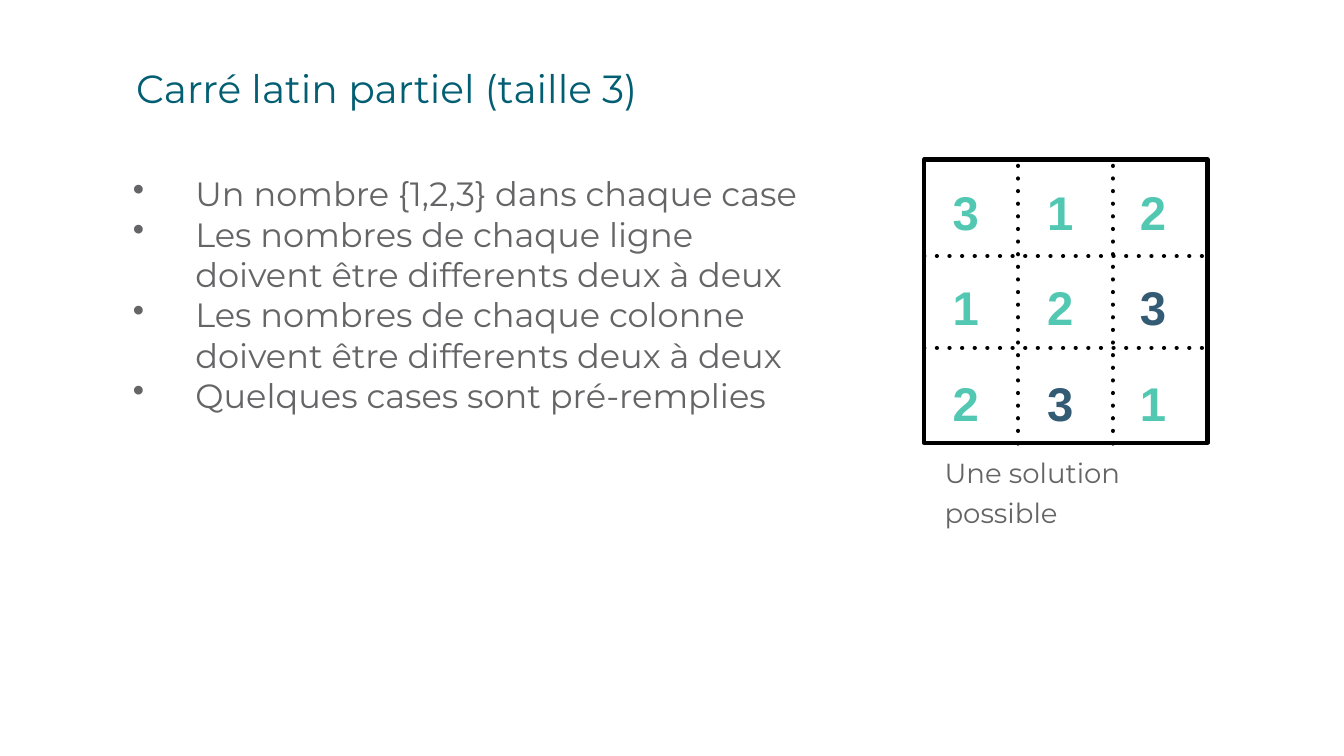
"""Build the slide on the partial Latin square of size 3."""
from lxml import etree
from pptx import Presentation
from pptx.dml.color import RGBColor
from pptx.enum import shapes, text
from pptx.oxml.ns import qn
from pptx.util import Pt

TITLE = "Carré latin partiel (taille 3)"
RULES = [
    "Un nombre {1,2,3} dans chaque case",
    "Les nombres de chaque ligne doivent être differents deux à deux",
    "Les nombres de chaque colonne doivent être differents deux à deux",
    "Quelques cases sont pré-remplies",
]
CAPTION = "Une solution possible"
SOLUTION = ["312", "123", "231"]
GIVEN = {(1, 2), (2, 1)}

COLORS = {"title": "025E73", "body": "656567", "found": "52C8B2",
          "given": "335B74", "line": "000000", "square": "FFFFFF"}
SQUARE_LEFT, SQUARE_TOP, SQUARE_SIDE = 660.2, 113.9, 202.4
ROW_LINES = (182.9, 248.4)
COLUMN_LINES = (727.2, 794.9)
DIGIT_LEFTS = (677.5, 745, 811.3)
DIGIT_TOPS = (120.2, 187.4, 256.5)
DIGIT_SIZE = (35.3, 50.4)
BULLET_INDENT = 44.7


def rgb(name):
    return RGBColor.from_string(COLORS[name])


def style(target, **values):
    for key, value in values.items():
        setattr(target, key, value)


def write(box, lines, size, color, face="Montserrat", bold=False,
          spacing=None, margin=None, anchor=text.MSO_ANCHOR.TOP, bullets=False):
    frame = box.text_frame
    frame.text = "\n".join(lines)
    style(frame, word_wrap=True, vertical_anchor=anchor,
          auto_size=text.MSO_AUTO_SIZE.NONE)
    if margin is not None:
        style(frame, **{f"margin_{side}": Pt(margin)
                        for side in ("left", "right", "top", "bottom")})
    for paragraph in frame.paragraphs:
        style(paragraph, alignment=text.PP_ALIGN.LEFT, line_spacing=spacing)
        if bullets:
            properties = paragraph._p.get_or_add_pPr()
            properties.set("marL", str(Pt(BULLET_INDENT)))
            properties.set("indent", str(-Pt(BULLET_INDENT)))
            etree.SubElement(properties, qn("a:buChar"), char="•")
        for run in paragraph.runs:
            style(run.font, name=face, size=Pt(size), bold=bold)
            run.font.color.rgb = rgb(color)


def add_text(slide, left, top, width, height, lines, **look):
    box = slide.shapes.add_textbox(Pt(left), Pt(top), Pt(width), Pt(height))
    write(box, lines, **look)


def add_dotted_line(group, *ends):
    divider = group.shapes.add_connector(
        shapes.MSO_CONNECTOR.STRAIGHT, *(Pt(end) for end in ends))
    divider.line.color.rgb = rgb("line")
    divider.line.width = Pt(3)
    outline = divider.line._ln
    outline.set("cap", "rnd")
    dots = etree.SubElement(outline, qn("a:custDash"))
    etree.SubElement(dots, qn("a:ds"), d="100000", sp="200000")
    etree.SubElement(divider._element.spPr, qn("a:effectLst"))


def add_square(slide):
    group = slide.shapes.add_group_shape()
    right, bottom = SQUARE_LEFT + SQUARE_SIDE, SQUARE_TOP + SQUARE_SIDE
    square = group.shapes.add_shape(
        shapes.MSO_SHAPE.RECTANGLE, Pt(SQUARE_LEFT), Pt(SQUARE_TOP),
        Pt(SQUARE_SIDE), Pt(SQUARE_SIDE))
    square.shadow.inherit = False
    square.fill.solid()
    square.fill.fore_color.rgb = rgb("square")
    square.line.color.rgb = rgb("line")
    square.line.width = Pt(3)
    for y in ROW_LINES:
        add_dotted_line(group, SQUARE_LEFT, y, right, y)
    for x in COLUMN_LINES:
        add_dotted_line(group, x, bottom + 0.5, x, SQUARE_TOP + 0.5)
    for row, (top, digits) in enumerate(zip(DIGIT_TOPS, SOLUTION)):
        for column, (left, digit) in enumerate(zip(DIGIT_LEFTS, digits)):
            color = "given" if (row, column) in GIVEN else "found"
            add_text(slide, left, top, *DIGIT_SIZE, [digit], size=33.8,
                     color=color, face="Arial", bold=True, spacing=1.2, margin=2.9)


def main():
    deck = Presentation()
    style(deck, slide_width=Pt(960), slide_height=Pt(540))
    slide = deck.slides.add_slide(deck.slide_layouts[5])
    title = slide.shapes.title
    style(title, left=Pt(90), top=Pt(46), width=Pt(828), height=Pt(54))
    write(title, [TITLE], size=28, color="title", spacing=0.9)
    add_text(slide, 87.8, 120.2, 504.7, 181.4, RULES, size=24, color="body",
             bullets=True)
    add_square(slide)
    add_text(slide, 671.8, 317.5, 179.3, 63.5, [CAPTION], size=19.7, color="body",
             spacing=1.2, margin=2.9, anchor=text.MSO_ANCHOR.MIDDLE)
    deck.save("out.pptx")


if __name__ == "__main__":
    main()
